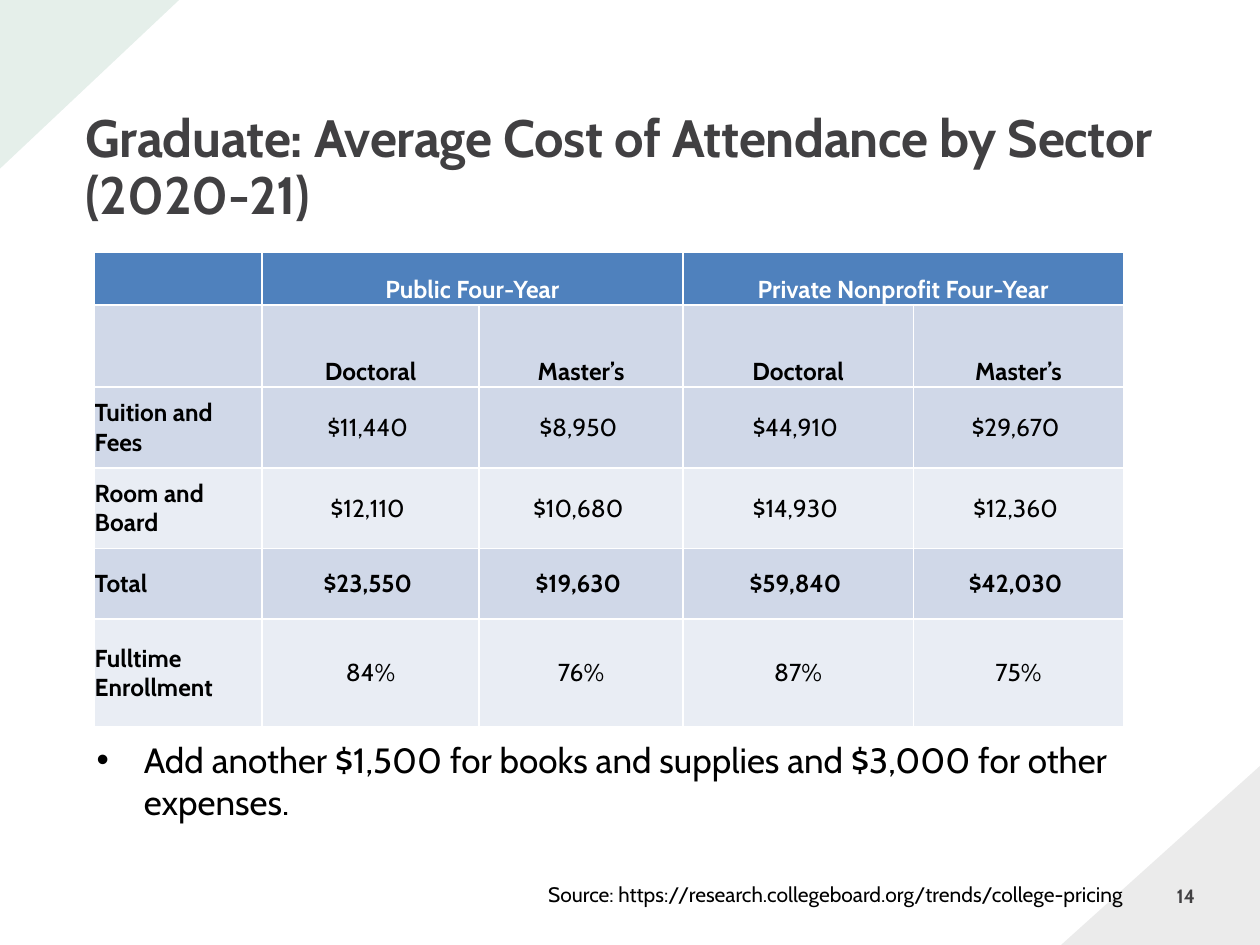
from lxml import etree
from pptx import Presentation
from pptx.dml.color import RGBColor
from pptx.enum.shapes import MSO_SHAPE
from pptx.enum.text import MSO_ANCHOR, MSO_AUTO_SIZE, PP_ALIGN
from pptx.oxml.ns import qn
from pptx.util import Cm, Pt

TRIANGLE = MSO_SHAPE.RIGHT_TRIANGLE
LEFT, CENTER, RIGHT = PP_ALIGN.LEFT, PP_ALIGN.CENTER, PP_ALIGN.RIGHT
MIDDLE, BOTTOM = MSO_ANCHOR.MIDDLE, MSO_ANCHOR.BOTTOM
NO_FIT = MSO_AUTO_SIZE.NONE
TITLE_ONLY = 5

COLORS = {
    "dark": "414042",
    "green": "056839",
    "text": "000000",
    "white": "FFFFFF",
    "header": "4F81BD",
    "band": "D0D8E8",
    "light": "E9EDF4",
}

GROUPS = {1: "Public Four-Year", 3: "Private Nonprofit Four-Year"}
ROWS = [
    ["", "Doctoral", "Master’s", "Doctoral", "Master’s"],
    ["Tuition and Fees", "$11,440 ", "$8,950 ", "$44,910 ", "$29,670 "],
    ["Room and Board", "$12,110 ", "$10,680 ", "$14,930 ", "$12,360 "],
    ["Total", "$23,550 ", "$19,630 ", "$59,840 ", "$42,030 "],
    ["Fulltime Enrollment", "84%", "76%", "87%", "75%"],
]
ROW_FILLS = ["header", "band", "band", "light", "band", "light"]
BOLD_ROWS = ("", "Total")
COL_WIDTHS = [3.37, 4.38, 4.11, 4.64, 4.24]
ROW_HEIGHTS = [1.07, 1.65, 1.63, 1.63, 1.42, 2.18]


def rgb(name):
    return RGBColor.from_string(COLORS[name])


class SlideBuilder:
    """Holds the font and the current slide."""

    def __init__(self, slide, font="Cabin"):
        self.slide = slide
        self.font = font

    def style(self, p, size, color="text", bold=False, align=LEFT):
        p.alignment = align
        for r in p.runs:
            r.font.name = self.font
            r.font.size = Pt(size)
            r.font.bold = bold
            r.font.color.rgb = rgb(color)

    def corner(self, left, top, width, height, rotation, color):
        sp = self.slide.shapes.add_shape(
            TRIANGLE, Cm(left), Cm(top), Cm(width), Cm(height))
        sp.rotation = rotation
        sp.shadow.inherit = False
        sp.line.fill.background()
        sp.fill.solid()
        sp.fill.fore_color.rgb = rgb(color)
        clr = sp.fill._xPr.find(".//" + qn("a:srgbClr"))
        etree.SubElement(clr, qn("a:alpha"), val="10000")

    def title(self, text, left, top, width, height):
        sp = self.slide.shapes.title
        sp.left, sp.top, sp.width, sp.height = map(Cm, (left, top, width, height))
        tf = sp.text_frame
        tf.auto_size = NO_FIT
        tf.word_wrap = True
        tf.vertical_anchor = BOTTOM
        tf.margin_left = tf.margin_top = tf.margin_right = tf.margin_bottom = 0
        tf.text = text
        p = tf.paragraphs[0]
        p.line_spacing = 0.9
        p._p.get_or_add_pPr().set("marL", str(Cm(0.03)))
        self.style(p, 30, "dark", True)
        p.runs[0].font._element.set("spc", "-20")

    def text(self, text, left, top, width, height, size, bullet=False, **style):
        sp = self.slide.shapes.add_textbox(
            Cm(left), Cm(top), Cm(width), Cm(height))
        tf = sp.text_frame
        tf.word_wrap = True
        tf.text = text
        p = tf.paragraphs[0]
        if bullet:
            pPr = p._p.get_or_add_pPr()
            pPr.set("marL", str(Cm(0.95)))
            pPr.set("indent", str(-Cm(0.95)))
            etree.SubElement(pPr, qn("a:buFont"), typeface="Arial")
            etree.SubElement(pPr, qn("a:buChar"), char="•")
        self.style(p, size, **style)

    def borders(self, cell, top=1, bottom=1):
        tcPr = cell._tc.get_or_add_tcPr()
        widths = {"lnL": 1, "lnR": 1, "lnT": top, "lnB": bottom}
        for side, width in widths.items():
            ln = etree.SubElement(tcPr, qn("a:" + side), w=str(Pt(width)))
            fill = etree.SubElement(ln, qn("a:solidFill"))
            etree.SubElement(fill, qn("a:srgbClr"), val=COLORS["white"])

    def cell(self, cell, text, fill, anchor, **style):
        cell.margin_left = cell.margin_right = 0
        cell.margin_top = cell.margin_bottom = 0
        cell.vertical_anchor = anchor
        cell.fill.solid()
        cell.fill.fore_color.rgb = rgb(fill)
        cell.text_frame.text = text
        self.style(cell.text_frame.paragraphs[0], 14, **style)

    def cost_table(self, left, top):
        table = self.slide.shapes.add_table(
            len(ROW_HEIGHTS), len(COL_WIDTHS), Cm(left), Cm(top),
            Cm(sum(COL_WIDTHS)), Cm(sum(ROW_HEIGHTS))).table
        for column, width in zip(table.columns, COL_WIDTHS):
            column.width = Cm(width)
        for row, height in zip(table.rows, ROW_HEIGHTS):
            row.height = Cm(height)
        header = [GROUPS.get(j, "") for j in range(len(COL_WIDTHS))]
        for i, values in enumerate([header] + ROWS):
            for j, value in enumerate(values):
                cell = table.cell(i, j)
                self.borders(cell, top=1.5 if i == 1 else 1,
                             bottom=1.5 if i == 0 else 1)
                self.cell(cell, value, ROW_FILLS[i],
                          BOTTOM if i < 2 else MIDDLE,
                          color="white" if i == 0 else "text",
                          bold=j == 0 or values[0] in BOLD_ROWS,
                          align=CENTER if j else LEFT)
        for j in GROUPS:
            table.cell(0, j).merge(table.cell(0, j + 1))


def main():
    prs = Presentation()
    prs.slide_width, prs.slide_height = Cm(25.4), Cm(19.05)
    s = SlideBuilder(prs.slides.add_slide(prs.slide_layouts[TITLE_ONLY]))
    s.corner(21.59, 15.24, 3.61, 4.01, 270, "dark")
    s.corner(0.1, -0.1, 3.4, 3.61, 90, "green")
    s.title("Graduate: Average Cost of Attendance by Sector (2020-21)",
            1.7, 2.21, 22.86, 2.34)
    s.text("Add another $1,500 for books and supplies and $3,000 for other expenses.",
           1.7, 14.76, 20.96, 1.96, 20, bullet=True)
    s.text("Source: https://research.collegeboard.org/trends/college-pricing",
           10.8, 17.65, 12.27, 1.27, 12)
    s.cost_table(1.91, 5.08)
    s.text("14", 18.62, 17.7, 5.72, 1.02, 11, color="dark", bold=True, align=RIGHT)
    prs.save("out.pptx")


if __name__ == "__main__":
    main()
